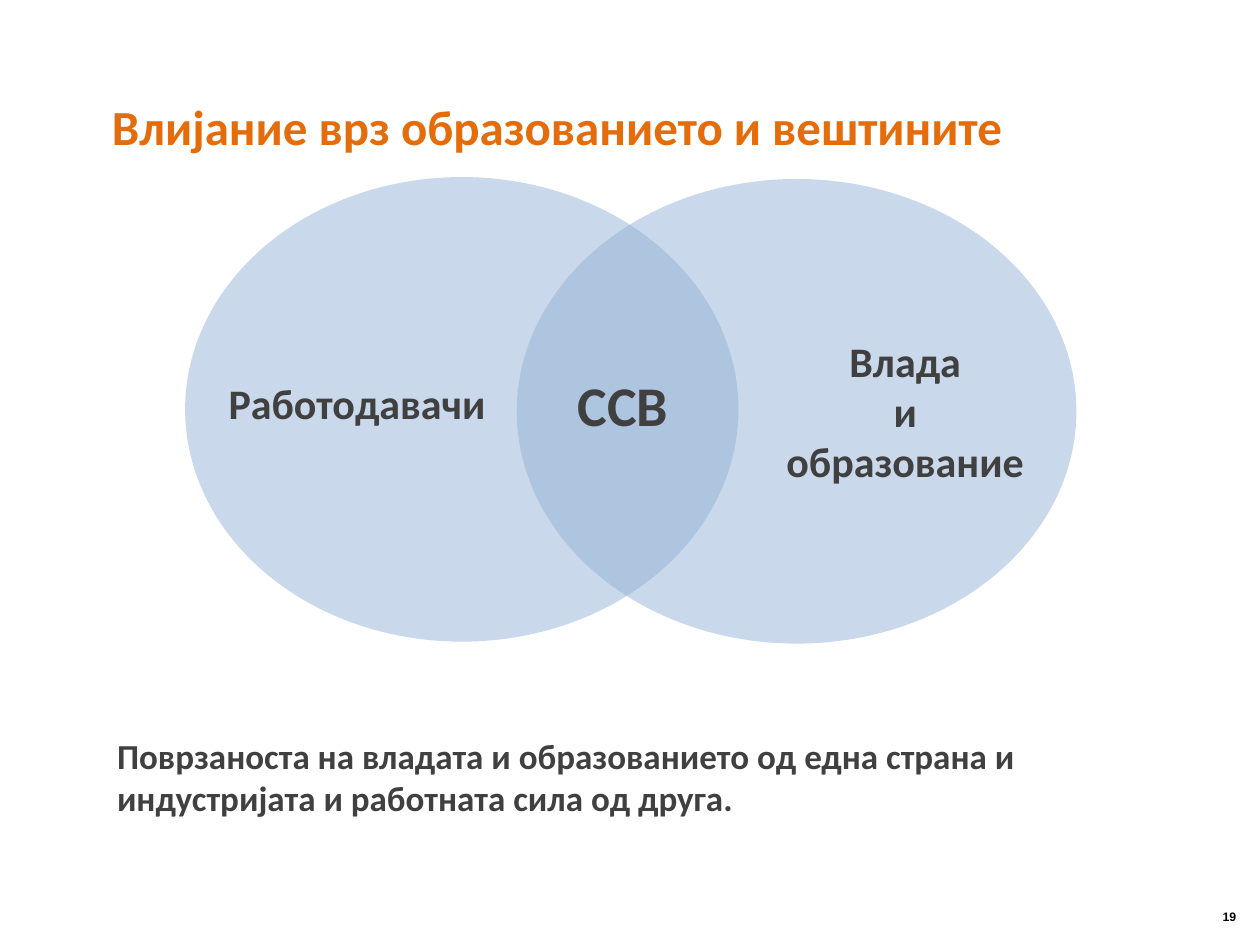
import pptx
import pptx.util
import pptx.dml.color
import pptx.enum.shapes
import pptx.enum.text
import pptx.oxml.ns
import lxml.etree

Pt = pptx.util.Pt
RGBColor = pptx.dml.color.RGBColor
Align = pptx.enum.text.PP_ALIGN
Anchor = pptx.enum.text.MSO_ANCHOR

WHITE = RGBColor(0xFF, 0xFF, 0xFF)
BLACK = RGBColor(0, 0, 0)
ORANGE = RGBColor(0xE4, 0x6C, 0x0A)
GREY = RGBColor(0x40, 0x40, 0x40)
BLUE = RGBColor(0x95, 0xB3, 0xD7)

deck = pptx.Presentation()
deck.slide_width, deck.slide_height = Pt(720), Pt(540)
slide = deck.slides.add_slide(deck.slide_layouts[6])
slide.background.fill.solid()
slide.background.fill.fore_color.rgb = WHITE


def add_text(lines, box, size, color, align=Align.LEFT, face="Calibri", anchor=Anchor.TOP):
    frame = slide.shapes.add_textbox(*map(Pt, box)).text_frame
    frame.word_wrap = True
    frame.vertical_anchor = anchor
    frame.text = "\n".join(lines)
    for para in frame.paragraphs:
        para.alignment = align
        para.font.name = face
        para.font.size = Pt(size)
        para.font.bold = True
        para.font.color.rgb = color


add_text(["19"], (637.2, 499, 76.3, 32.4), 7, BLACK, Align.RIGHT, "Arial", Anchor.BOTTOM)
add_text(["Влијание врз образованието и вештините"], (56.9, 51.8, 592.6, 41), 28, ORANGE)

for left, top, width in [(105.8, 101.2, 316.2), (295.3, 102.3, 319.8)]:
    oval = slide.shapes.add_shape(
        pptx.enum.shapes.MSO_SHAPE.OVAL, Pt(left), Pt(top), Pt(width), Pt(265.5))
    oval.shadow.inherit = False
    oval.line.fill.background()
    oval.fill.solid()
    oval.fill.fore_color.rgb = BLUE
    tint = oval.fill._xPr.find(".//" + pptx.oxml.ns.qn("a:srgbClr"))
    lxml.etree.SubElement(tint, pptx.oxml.ns.qn("a:alpha"), val="50000")

labels = [
    (["ССВ"], (313.9, 208.1, 84.2, 46), 32),
    (["Работодавачи"], (113, 212.4, 182.2, 36), 24),
    (["Влада", "и образование"], (439.2, 187.9, 156.2, 94.3), 24),
]
for lines, box, size in labels:
    add_text(lines, box, size, GREY, Align.CENTER)

add_text(["Поврзаноста на владата и образованието од една страна и индустријата и работната сила од друга."],
         (59.8, 416.2, 592.6, 55.4), 20, GREY)

deck.save("out.pptx")
